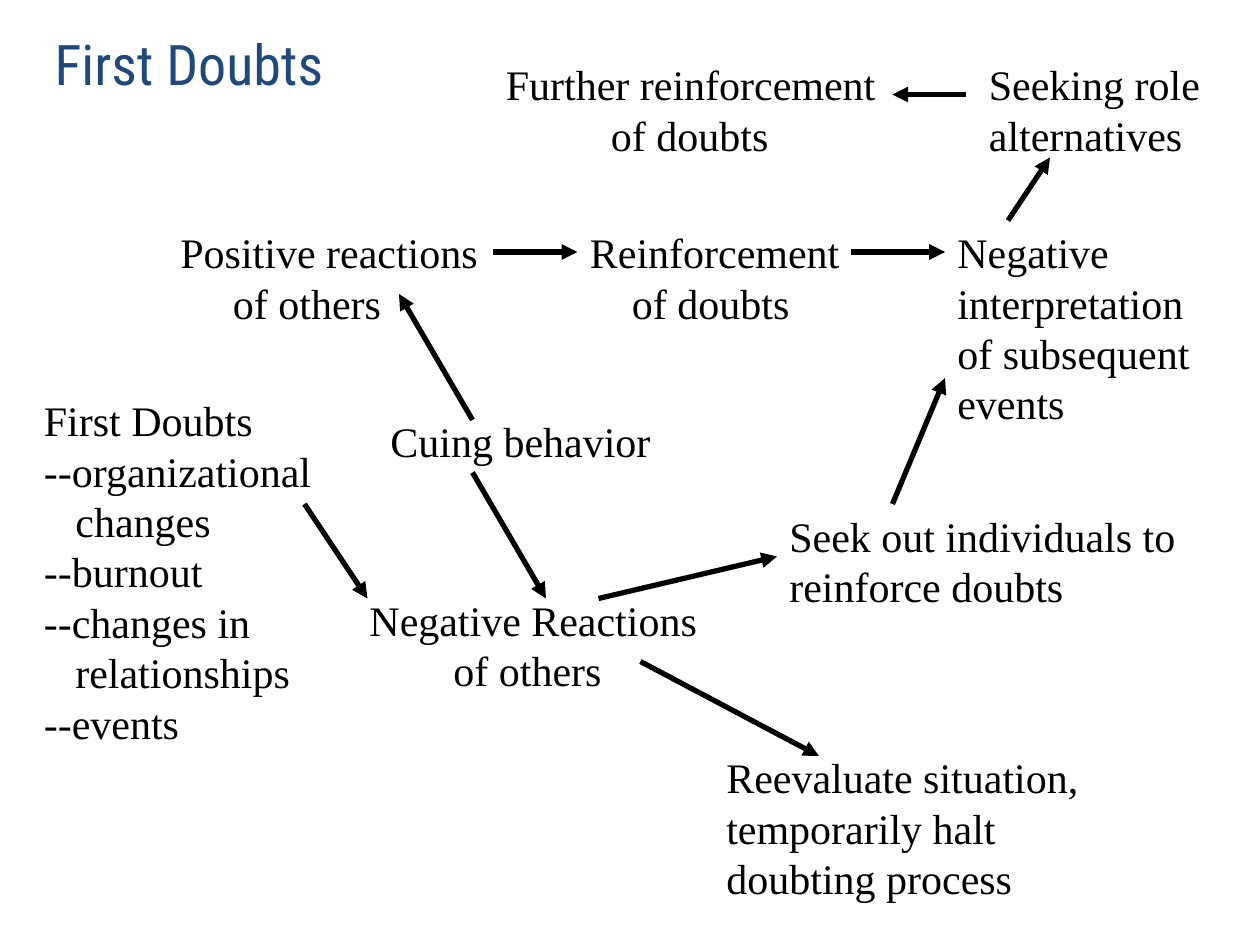
from pptx import Presentation
from pptx.dml.color import RGBColor
from pptx.enum.shapes import MSO_CONNECTOR as Connector
from pptx.enum.text import MSO_ANCHOR as Anchor, MSO_AUTO_SIZE as AutoSize, PP_ALIGN as Align
from pptx.oxml.ns import qn
from pptx.util import Pt
from lxml.etree import SubElement

NAVY = RGBColor(0x1F, 0x49, 0x7D)
BLACK = RGBColor(0, 0, 0)

STAGES = [
    (18, 222, 170, [("First Doubts", 0), ("--organizational", 0), ("changes", 18), ("--burnout", 0),
                    ("--changes in", 0), ("relationships", 18), ("--events", 0)]),
    (204, 336, 204, [("Negative Reactions", 0), ("of others", 48)]),
    (444, 288, 237, [("Seek out individuals to", 0), ("reinforce doubts", 0)]),
    (216, 234, 165, [("Cuing behavior", 0)]),
    (540, 126, 155, [("Negative", 0), ("interpretation", 0), ("of subsequent", 0), ("events", 0)]),
    (330, 126, 159, [("Reinforcement", 0), ("of doubts", 24)]),
    (96, 126, 187, [("Positive reactions", 0), ("of others", 30)]),
    (558, 30, 137, [("Seeking role", 0), ("alternatives", 0)]),
    (282, 30, 228, [("Further reinforcement", 0), ("of doubts", 60)]),
]

STEPS = [
    (174, 288, 210, 342),
    (366, 378, 468, 432),
    (342, 342, 444, 318),
    (510, 288, 540, 216),
    (576, 126, 600, 90),
    (552, 54, 510, 54),
    (270, 270, 312, 342),
    (270, 240, 228, 168),
    (282, 144, 330, 144),
    (486, 144, 540, 144),
]


def write(paragraph, text, *, font="Times New Roman", size=24, color=BLACK, indent=0):
    paragraph.alignment = Align.LEFT
    if indent:
        paragraph._p.get_or_add_pPr().set("marL", str(Pt(indent)))
    run = paragraph.add_run()
    run.text = text
    run.font.name = font
    run.font.size = Pt(size)
    run.font.color.rgb = color


class FlowSlide:
    line_height = 29
    padding = 7.2
    arrow_width = 3

    def __init__(self, presentation):
        self.slide = presentation.slides.add_slide(presentation.slide_layouts[5])

    def title(self, text, left, top, width, height):
        heading = self.slide.shapes.title
        heading.left, heading.top = Pt(left), Pt(top)
        heading.width, heading.height = Pt(width), Pt(height)
        frame = heading.text_frame
        frame.auto_size = AutoSize.NONE
        frame.vertical_anchor = Anchor.MIDDLE
        write(frame.paragraphs[0], text, font="Roboto Condensed", size=32, color=NAVY)

    def stage(self, left, top, width, lines, rows=None):
        height = self.line_height * (rows or len(lines)) + self.padding
        frame = self.slide.shapes.add_textbox(Pt(left), Pt(top), Pt(width), Pt(height)).text_frame
        frame.word_wrap = True
        frame.auto_size = AutoSize.SHAPE_TO_FIT_TEXT
        for number, (text, indent) in enumerate(lines):
            paragraph = frame.add_paragraph() if number else frame.paragraphs[0]
            write(paragraph, text, indent=indent)

    def arrow(self, *ends):
        step = self.slide.shapes.add_connector(Connector.STRAIGHT, *map(Pt, ends))
        step.line.color.rgb = BLACK
        step.line.width = Pt(self.arrow_width)
        properties = step.element.spPr
        SubElement(properties.find(qn("a:ln")), qn("a:tailEnd"), type="triangle")
        SubElement(properties, qn("a:effectLst"))


def main():
    presentation = Presentation()
    presentation.slide_width, presentation.slide_height = Pt(720), Pt(540)
    flow = FlowSlide(presentation)
    flow.title("First Doubts", 24, 18, 204, 36)
    for stage in STAGES:
        flow.stage(*stage)
    outcome = "Reevaluate situation, temporarily halt doubting process"
    flow.stage(408, 426, 258, [(outcome, 0)], rows=3)
    for step in STEPS:
        flow.arrow(*step)
    presentation.save("out.pptx")


if __name__ == "__main__":
    main()
